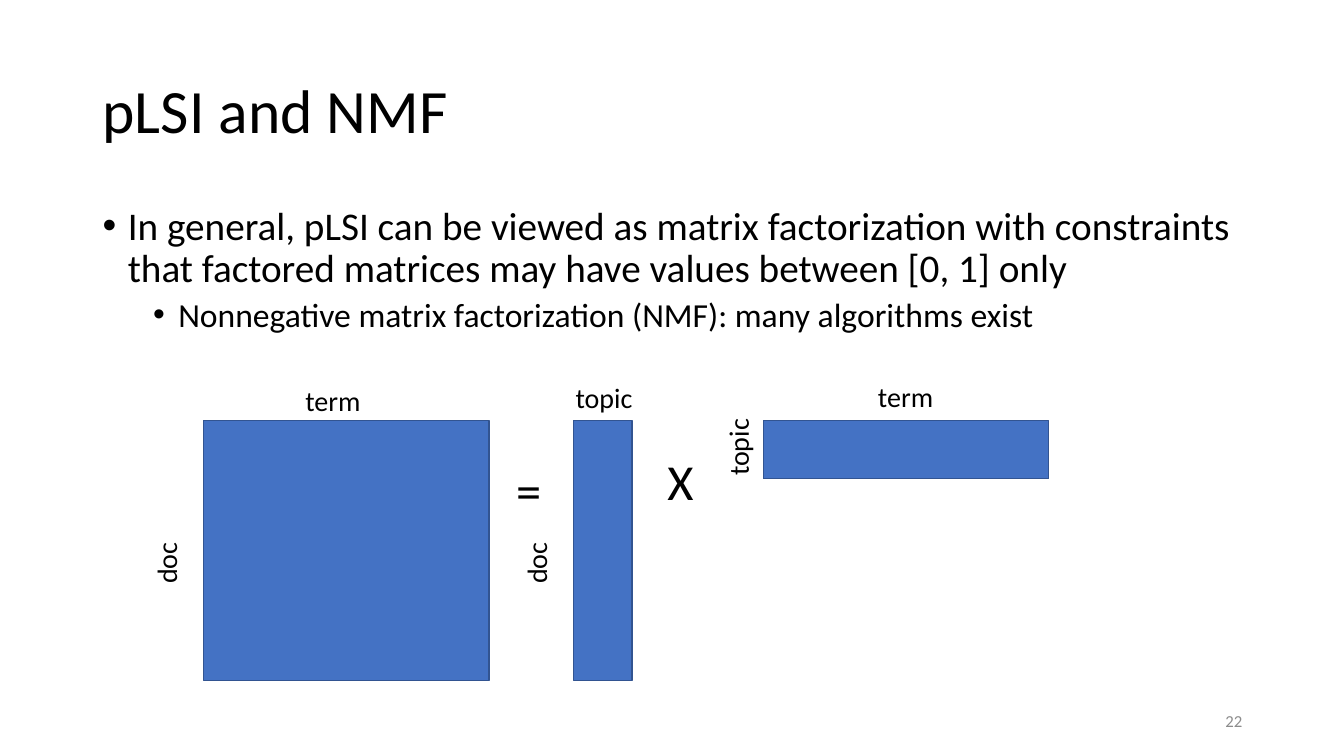
from dataclasses import dataclass

from lxml.etree import SubElement
from pptx import Presentation
from pptx.dml.color import RGBColor
from pptx.enum.shapes import MSO_SHAPE
from pptx.enum.text import MSO_ANCHOR, MSO_AUTO_SIZE, PP_ALIGN
from pptx.oxml.ns import qn
from pptx.util import Inches, Pt


@dataclass(frozen=True)
class Theme:
    font: str = "Calibri"
    ink: str = "000000"
    gray: str = "8C8C8C"
    fill: str = "4472C4"
    edge: str = "325491"
    title: int = 44
    body: int = 28
    sub: int = 24
    sign: int = 36
    label: int = 20
    page: int = 12


theme = Theme()


def add_run(para, text, size, color=theme.ink):
    run = para.add_run()
    run.text = text
    run.font.name = theme.font
    run.font.size = Pt(size)
    run.font.color.rgb = RGBColor.from_string(color)


def add_box(left, top, width, height, wrap=True, anchor=MSO_ANCHOR.TOP):
    box = slide.shapes.add_textbox(
        Inches(left), Inches(top), Inches(width), Inches(height))
    box.text_frame.word_wrap = wrap
    box.text_frame.vertical_anchor = anchor
    return box


deck = Presentation()
deck.slide_width, deck.slide_height = Inches(13.33), Inches(7.5)
slide = deck.slides.add_slide(deck.slide_layouts[6])

# Title
para = add_box(0.92, 0.4, 11.5, 1.45,
               anchor=MSO_ANCHOR.MIDDLE).text_frame.paragraphs[0]
para.line_spacing = 0.9
add_run(para, "pLSI and NMF", theme.title)

# Bullets: text, level, indent, space before, size
points = [
    ("In general, pLSI can be viewed as matrix factorization with constraints "
     "that factored matrices may have values between [0, 1] only",
     0, 0.25, 10, theme.body),
    ("Nonnegative matrix factorization (NMF): many algorithms exist",
     1, 0.75, 5, theme.sub),
]
frame = add_box(0.92, 2, 11.5, 4.76).text_frame
for text, level, indent, before, size in points:
    para = frame.add_paragraph() if level else frame.paragraphs[0]
    para.level = level
    para.line_spacing = 0.9
    para.space_before = Pt(before)
    props = para._p.get_or_add_pPr()
    props.set("marL", str(Inches(indent)))
    props.set("indent", str(Inches(-0.25)))
    SubElement(props, qn("a:buFont"), typeface="Arial")
    SubElement(props, qn("a:buChar"), char="•")
    add_run(para, text, size)

# Matrices: doc by term = doc by topic X topic by term
top, long, tall, thin = 4.17, 2.83, 2.58, 0.58
for left, width, height in [(2.02, long, tall), (5.69, thin, tall),
                            (7.57, long, thin)]:
    rect = slide.shapes.add_shape(MSO_SHAPE.RECTANGLE, Inches(left),
                                  Inches(top), Inches(width), Inches(height))
    rect.shadow.inherit = False
    rect.fill.solid()
    rect.fill.fore_color.rgb = RGBColor.from_string(theme.fill)
    rect.line.color.rgb = RGBColor.from_string(theme.edge)
    rect.line.width = Pt(1)

# Labels and signs: text, place, size, upright
labels = [
    ("doc", (1.43, 5.38, 0.54, 0.51), theme.label, True),
    ("doc", (5.1, 5.38, 0.54, 0.51), theme.label, True),
    ("topic", (7.1, 4.15, 0.54, 0.67), theme.label, True),
    ("term", (2.93, 3.76, 0.76, 0.44), theme.label, False),
    ("term", (8.61, 3.72, 0.76, 0.44), theme.label, False),
    ("=", (5.02, 4.51, 0.5, 0.71), theme.sign, False),
    ("X", (6.52, 4.42, 0.58, 0.71), theme.sign, False),
    ("topic", (5.61, 3.73, 0.77, 0.44), theme.label, False),
]
for text, place, size, upright in labels:
    box = add_box(*place, wrap=text == "X")
    box.text_frame.auto_size = MSO_AUTO_SIZE.SHAPE_TO_FIT_TEXT
    if upright:
        box.text_frame._txBody.bodyPr.set("vert", "vert270")
    add_run(box.text_frame.paragraphs[0], text, size)

# Page number
para = add_box(9.42, 6.95, 3, 0.4,
               anchor=MSO_ANCHOR.MIDDLE).text_frame.paragraphs[0]
para.alignment = PP_ALIGN.RIGHT
add_run(para, "22", theme.page, theme.gray)

deck.save("out.pptx")
